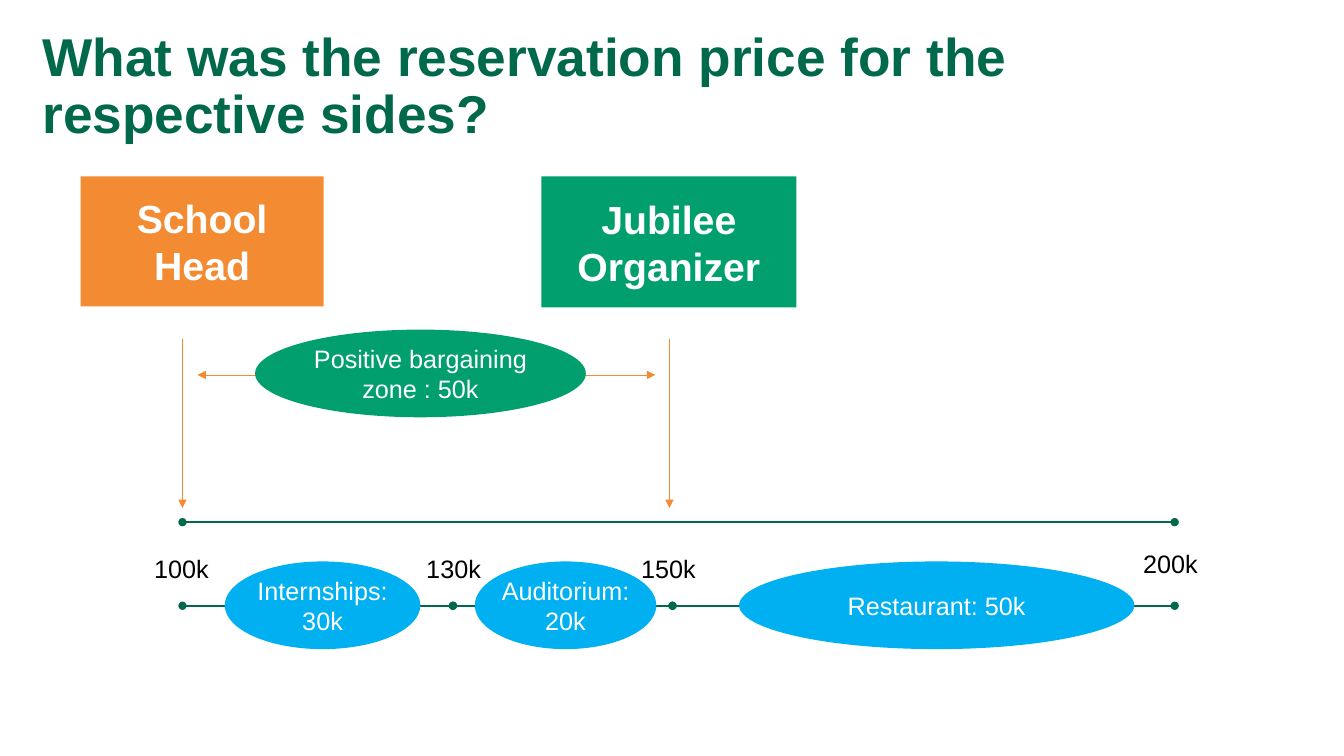
import dataclasses

import lxml.etree
import pptx
import pptx.dml.color
import pptx.enum.shapes
import pptx.enum.text
import pptx.oxml.ns
import pptx.util

SHAPES = pptx.enum.shapes.MSO_SHAPE
ALIGN = pptx.enum.text.PP_ALIGN
ANCHOR = pptx.enum.text.MSO_ANCHOR


@dataclasses.dataclass(frozen=True)
class Theme:
    font: str = "Arial"
    dark_green: str = "00684B"
    green: str = "019F6E"
    orange: str = "F38B32"
    blue: str = "00B0F0"
    white: str = "FFFFFF"
    black: str = "000000"
    title_size: int = 38
    party_size: int = 28
    body_size: int = 18
    scale_line: float = 1.5
    arrow_line: float = 0.5


THEME = Theme()
WIDTH = pptx.util.Inches(13.33)
HEIGHT = pptx.util.Inches(7.5)

# Places are percent of the slide's width (x) and height (y)
STOPS = [13.58, 33.7, 50.04, 87.4]
SCALE_Y, ISSUES_Y = 69.07, 80.13
ISSUE_TOP, OVAL_HEIGHT = 74.27, 11.6


def across(share):
    return round(WIDTH * share / 100)


def down(share):
    return round(HEIGHT * share / 100)


def place(left, top, width, height):
    return across(left), down(top), across(width), down(height)


def rgb(color):
    return pptx.dml.color.RGBColor.from_string(color)


def write(frame, text, size=THEME.body_size, color=THEME.white, bold=False,
          align=ALIGN.CENTER, anchor=ANCHOR.MIDDLE, spacing=None, side_inset=None):
    """Fill a text frame, one paragraph for each line of text."""
    frame.word_wrap = True
    frame.vertical_anchor = anchor
    if side_inset is not None:
        frame.margin_left = frame.margin_right = side_inset
    for index, line in enumerate(text.split("\n")):
        para = frame.add_paragraph() if index else frame.paragraphs[0]
        para.alignment = align
        if spacing:
            para.line_spacing = spacing
        span = para.add_run()
        span.text = line
        span.font.name = THEME.font
        span.font.size = pptx.util.Pt(size)
        span.font.bold = bold
        span.font.color.rgb = rgb(color)


def add_title(page, text):
    title = page.shapes.title
    title.left, title.top, title.width, title.height = place(3.15, 4, 87.62, 13.73)
    frame = title.text_frame
    frame.margin_top = frame.margin_bottom = 0
    frame.auto_size = pptx.enum.text.MSO_AUTO_SIZE.NONE
    write(frame, text, size=THEME.title_size, color=THEME.dark_green, bold=True,
          align=ALIGN.LEFT, anchor=ANCHOR.TOP, spacing=0.9, side_inset=0)


def add_filled(page, kind, area, fill, text, **text_format):
    box = page.shapes.add_shape(kind, *place(*area))
    box.shadow.inherit = False
    box.fill.solid()
    box.fill.fore_color.rgb = rgb(fill)
    box.line.fill.background()
    write(box.text_frame, text, **text_format)


def add_label(page, left, top, text):
    box = page.shapes.add_textbox(*place(left, top, 6.15, 5.33))
    write(box.text_frame, text, color=THEME.black, align=ALIGN.LEFT, anchor=ANCHOR.TOP)
    box.text_frame.auto_size = pptx.enum.text.MSO_AUTO_SIZE.SHAPE_TO_FIT_TEXT


def add_line(page, start, end, color, weight, head=None, tail=None):
    line = page.shapes.add_connector(
        pptx.enum.shapes.MSO_CONNECTOR.STRAIGHT,
        across(start[0]), down(start[1]), across(end[0]), down(end[1]))
    line.line.color.rgb = rgb(color)
    line.line.width = pptx.util.Pt(weight)
    qn = pptx.oxml.ns.qn
    properties = line._element.spPr
    for tag, ending in (("a:headEnd", head), ("a:tailEnd", tail)):
        if ending:
            lxml.etree.SubElement(properties.find(qn("a:ln")), qn(tag), type=ending)
    lxml.etree.SubElement(properties, qn("a:effectLst"))


def add_scale(page, start, end, y):
    add_line(page, (start, y), (end, y), THEME.dark_green, THEME.scale_line,
             head="oval", tail="oval")


def add_arrow(page, start, end, head=None):
    add_line(page, start, end, THEME.orange, THEME.arrow_line, head=head, tail="triangle")


def main():
    deck = pptx.Presentation()
    deck.slide_width, deck.slide_height = WIDTH, HEIGHT
    page = deck.slides.add_slide(deck.slide_layouts.get_by_name("Title Only"))
    add_title(page, "What was the reservation price for the respective sides?")

    # The two parties
    for area, fill, name in (
            ((6, 23.33, 18.08, 17.2), THEME.orange, "School\nHead"),
            ((40.28, 23.33, 18.98, 17.33), THEME.green, "Jubilee Organizer")):
        add_filled(page, SHAPES.RECTANGLE, area, fill, name,
                   size=THEME.party_size, bold=True)

    # Reservation prices and the zone between them
    for x in (STOPS[0], 49.81):
        add_arrow(page, (x, 44.8), (x, 67.2))
    add_arrow(page, (14.7, 49.6), (48.76, 49.6), head="triangle")
    add_filled(page, SHAPES.OVAL, (18.98, 43.6, 24.61, OVAL_HEIGHT), THEME.green,
               "Positive bargaining zone : 50k")

    # Price scale, whole and split by issue
    add_scale(page, STOPS[0], STOPS[-1], SCALE_Y)
    for start, end in zip(STOPS, STOPS[1:]):
        add_scale(page, start, end, ISSUES_Y)
    for left, top, price in ((10.73, 72.53, "100k"), (30.98, 72.53, "130k"),
                             (46.96, 72.53, "150k"), (84.32, 71.87, "200k")):
        add_label(page, left, top, price)

    # Issues
    for left, width, issue, inset in ((16.73, 14.55, "Internships:30k", 0),
                                      (35.33, 13.5, "Auditorium: 20k", 0),
                                      (54.99, 29.41, "Restaurant: 50k", None)):
        add_filled(page, SHAPES.OVAL, (left, ISSUE_TOP, width, OVAL_HEIGHT),
                   THEME.blue, issue, side_inset=inset)

    deck.save("out.pptx")


if __name__ == "__main__":
    main()
